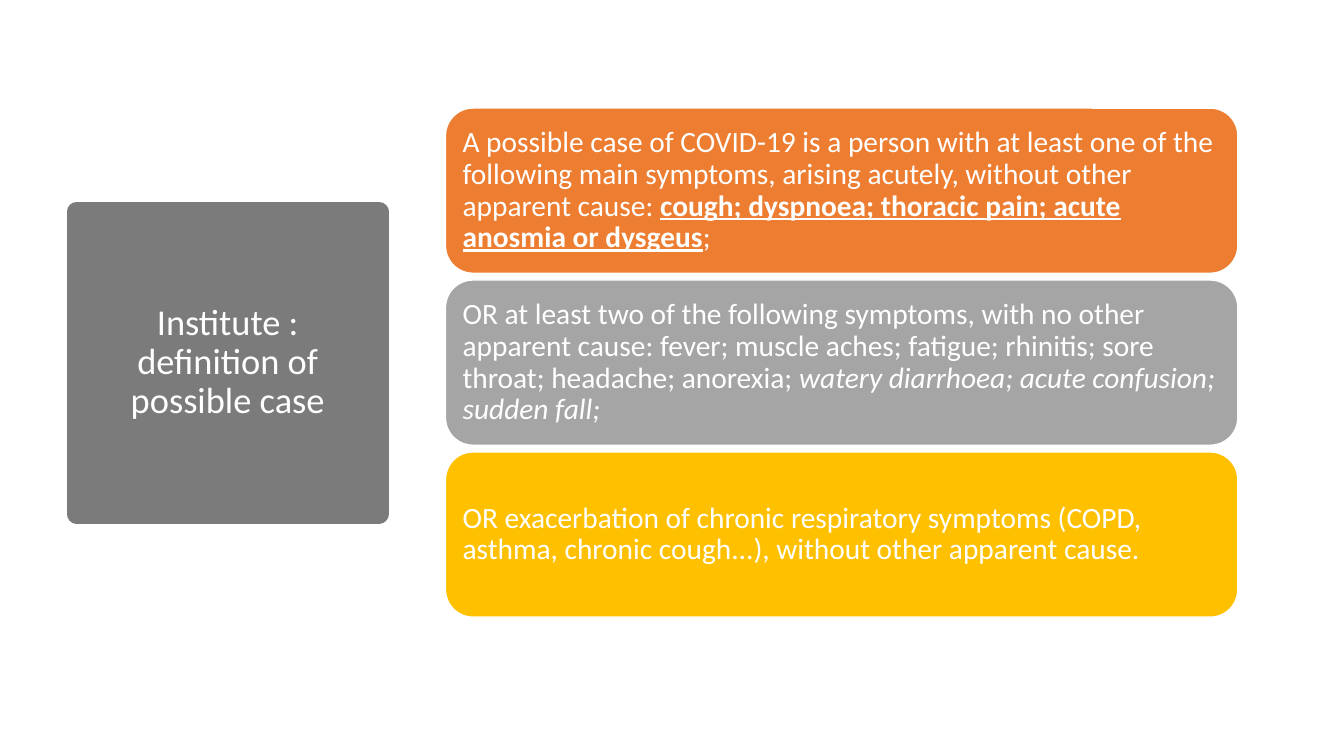
from pptx import Presentation
from pptx.dml.color import RGBColor
from pptx.enum.shapes import MSO_SHAPE
from pptx.enum.text import MSO_ANCHOR, MSO_AUTO_SIZE, PP_ALIGN
from pptx.util import Pt

CASES = [
    ("ED7D31", [
        ("A possible case of COVID-19 is a person with at least one of the "
         "following main symptoms, arising acutely, without other apparent cause: ", {}),
        ("cough; dyspnoea; thoracic pain; acute anosmia or dysgeus",
         {"bold": True, "underline": True}),
        (";", {}),
    ]),
    ("A5A5A5", [
        ("OR at least two of the following symptoms, with no other apparent cause: "
         "fever; muscle aches; fatigue; rhinitis; sore throat; headache; anorexia; ", {}),
        ("watery diarrhoea; acute confusion; sudden fall;", {"italic": True}),
    ]),
    ("FFC000", [
        ("OR exacerbation of chronic respiratory symptoms (COPD, asthma, "
         "chronic cough...), without other apparent cause.", {}),
    ]),
]


def color(code):
    return RGBColor.from_string(code)


def paint(shape, fill, line, width):
    shape.fill.solid()
    shape.fill.fore_color.rgb = color(fill)
    shape.line.color.rgb = color(line)
    shape.line.width = Pt(width)


def place(shape, left, top, width, height):
    shape.left, shape.top = Pt(left), Pt(top)
    shape.width, shape.height = Pt(width), Pt(height)


def write(shape, runs, size=21, align=PP_ALIGN.LEFT, inset=6.5):
    frame = shape.text_frame
    frame.word_wrap = True
    frame.auto_size = MSO_AUTO_SIZE.NONE
    frame.vertical_anchor = MSO_ANCHOR.MIDDLE
    frame.margin_left = frame.margin_right = Pt(inset)
    frame.margin_top = frame.margin_bottom = Pt(inset)
    para = frame.paragraphs[0]
    para.alignment = align
    para.line_spacing = 0.9
    for text, style in runs:
        run = para.add_run()
        run.text = text
        run.font.name = "Calibri"
        run.font.size = Pt(size)
        run.font.color.rgb = color("FFFFFF")
        for name, value in style.items():
            setattr(run.font, name, value)


def add_title(slide, left, top, width, height):
    title = slide.shapes.title
    place(title, left, top, width, height)
    paint(title, "7B7B7B", "7B7B7B", 13.75)
    write(title, [("Institute : definition of possible case", {})],
          size=26, align=PP_ALIGN.CENTER, inset=32)


def add_cases(slide, left, top, width, height, gap=4.8):
    tall = (height - gap * (len(CASES) - 1)) / len(CASES)
    for row, (fill, runs) in enumerate(CASES):
        card = slide.shapes.add_shape(MSO_SHAPE.ROUNDED_RECTANGLE, 0, 0, 0, 0)
        place(card, left, top + row * (tall + gap), width, tall)
        card.shadow.inherit = False
        paint(card, fill, "FFFFFF", 1)
        write(card, runs)


def main():
    deck = Presentation()
    deck.slide_width, deck.slide_height = Pt(960), Pt(540)
    slide = deck.slides.add_slide(deck.slide_layouts[5])
    add_title(slide, 54.7, 151.2, 216, 216)
    add_cases(slide, 318.2, 77.2, 566, 363.6)
    deck.save("out.pptx")


if __name__ == "__main__":
    main()
